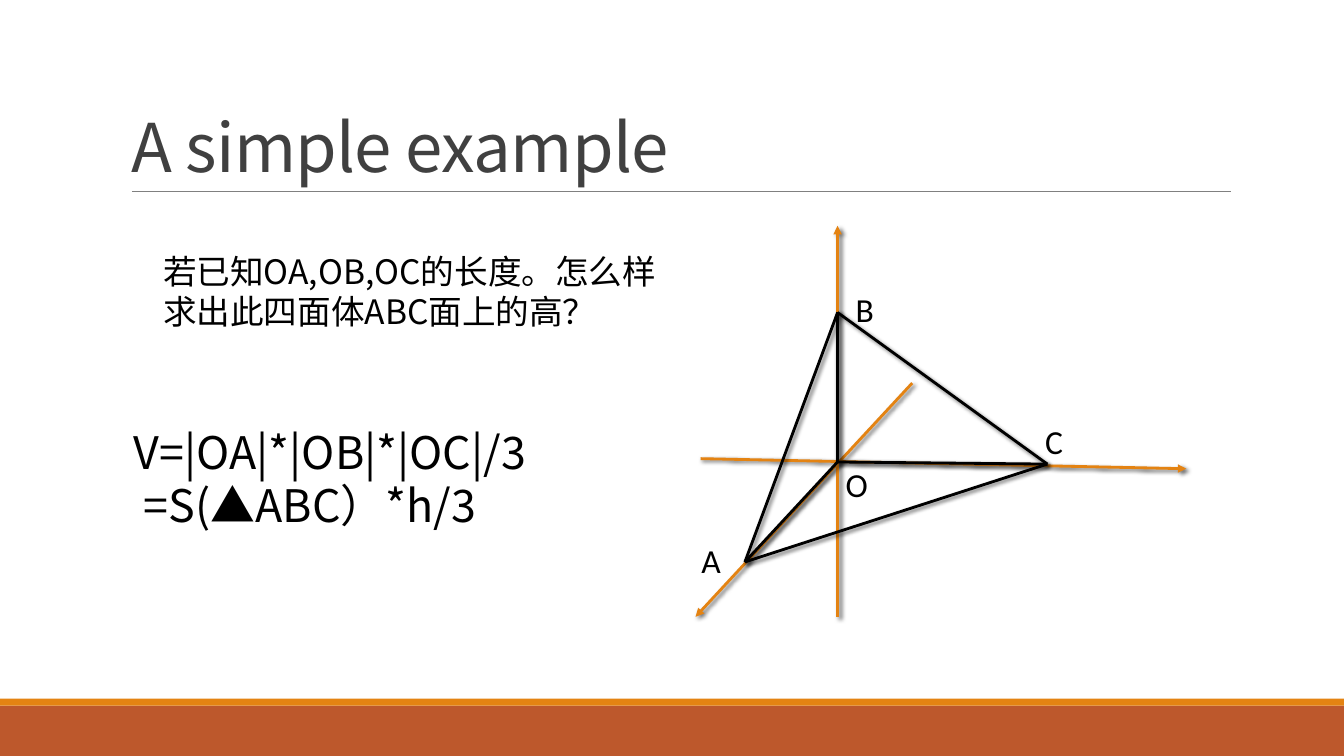
from itertools import combinations
from lxml.etree import SubElement
from pptx import Presentation
from pptx.dml.color import RGBColor
from pptx.enum.shapes import MSO_CONNECTOR, MSO_SHAPE
from pptx.enum.text import MSO_ANCHOR, MSO_AUTO_SIZE, PP_ALIGN
from pptx.oxml.ns import qn
from pptx.util import Pt

COLORS = {"band": "BD582C", "accent": "E48312", "rule": "808080",
          "title": "404040", "ink": "000000"}
CJK_FONT = "Noto Sans CJK SC"
LABEL_FONT = "Calibri"

TITLE = "A simple example"
TITLE_BOX = (86.4, 22.3, 792, 114.5)
TITLE_RULE = ((94.3, 136.8), (879.1, 136.8))
BANDS = [("band", 504, 36), ("accent", 499, 5)]
TEXTS = [
    (["若已知OA,OB,OC的长度。怎么样求出此四面体ABC面上的高？"], 24, (109.4, 175.7, 369.4, 65.5)),
    (["V=|OA|*|OB|*|OC|/3", " =S(▲ABC）*h/3"], 32, (88.6, 299.5, 369.4, 85)),
]
AXES = [
    ((500.4, 327.6), (847.4, 334.8)),
    ((651.6, 273.6), (496.8, 440.6)),
    ((598.3, 440.6), (598.3, 161.3)),
]
VERTICES = {"A": (532.1, 401.4), "B": (598.3, 223.2),
            "C": (748.1, 331.5), "O": (598.3, 330)}
LABEL_CORNERS = {"A": (493.9, 382.3), "B": (604.1, 203),
                 "C": (739.4, 297.4), "O": (596.9, 327.6)}
LABEL_SIZE = (26.6, 36)


def points(values):
    return [Pt(value) for value in values]


def style_paragraph(paragraph, size, font, color):
    paragraph.font.size = Pt(size)
    paragraph.font.name = font
    paragraph.font.color.rgb = RGBColor.from_string(COLORS[color])
    properties = paragraph.font._element
    SubElement(properties, qn("a:ea"), typeface=font)
    return properties


def add_text(slide, lines, size, font, box):
    frame = slide.shapes.add_textbox(*points(box)).text_frame
    frame.word_wrap = True
    frame.text = "\n".join(lines)
    for paragraph in frame.paragraphs:
        style_paragraph(paragraph, size, font, "ink")


def add_line(slide, start, end, color, width, arrow=False, shadow=True):
    line = slide.shapes.add_connector(MSO_CONNECTOR.STRAIGHT, *points(start + end))
    line.line.color.rgb = RGBColor.from_string(COLORS[color])
    line.line.width = Pt(width)
    if arrow:
        SubElement(line.line._get_or_add_ln(), qn("a:tailEnd"), type="triangle")
    effects = SubElement(line._element.spPr, qn("a:effectLst"))
    if shadow:
        outer = SubElement(effects, qn("a:outerShdw"), blurRad=str(Pt(3)),
                           dist=str(Pt(2)), dir="2700000", rotWithShape="0")
        shade = SubElement(outer, qn("a:srgbClr"), val=COLORS["ink"])
        SubElement(shade, qn("a:alpha"), val="60000")


def add_title(slide):
    title = slide.shapes.title
    title.left, title.top, title.width, title.height = points(TITLE_BOX)
    frame = title.text_frame
    frame.text = TITLE
    frame.auto_size = MSO_AUTO_SIZE.NONE
    frame.vertical_anchor = MSO_ANCHOR.BOTTOM
    heading = frame.paragraphs[0]
    heading.alignment = PP_ALIGN.LEFT
    heading.line_spacing = 0.85
    style_paragraph(heading, 48, CJK_FONT, "title").set("spc", "-50")


def main():
    deck = Presentation()
    deck.slide_width, deck.slide_height = Pt(960), Pt(540)
    slide = deck.slides.add_slide(deck.slide_layouts[5])

    for color, top, height in BANDS:
        band = slide.shapes.add_shape(MSO_SHAPE.RECTANGLE, *points((0, top, 960, height)))
        band.fill.solid()
        band.fill.fore_color.rgb = RGBColor.from_string(COLORS[color])
        band.line.fill.background()
        band.shadow.inherit = False
    add_line(slide, *TITLE_RULE, "rule", 0.5, shadow=False)
    add_title(slide)

    for start, end in AXES:
        add_line(slide, start, end, "accent", 2, arrow=True)
    for start, end in combinations(VERTICES.values(), 2):
        add_line(slide, start, end, "ink", 2)
    for vertex, corner in LABEL_CORNERS.items():
        add_text(slide, [vertex], 24, LABEL_FONT, corner + LABEL_SIZE)
    for lines, size, box in TEXTS:
        add_text(slide, lines, size, CJK_FONT, box)

    deck.save("out.pptx")


if __name__ == "__main__":
    main()
